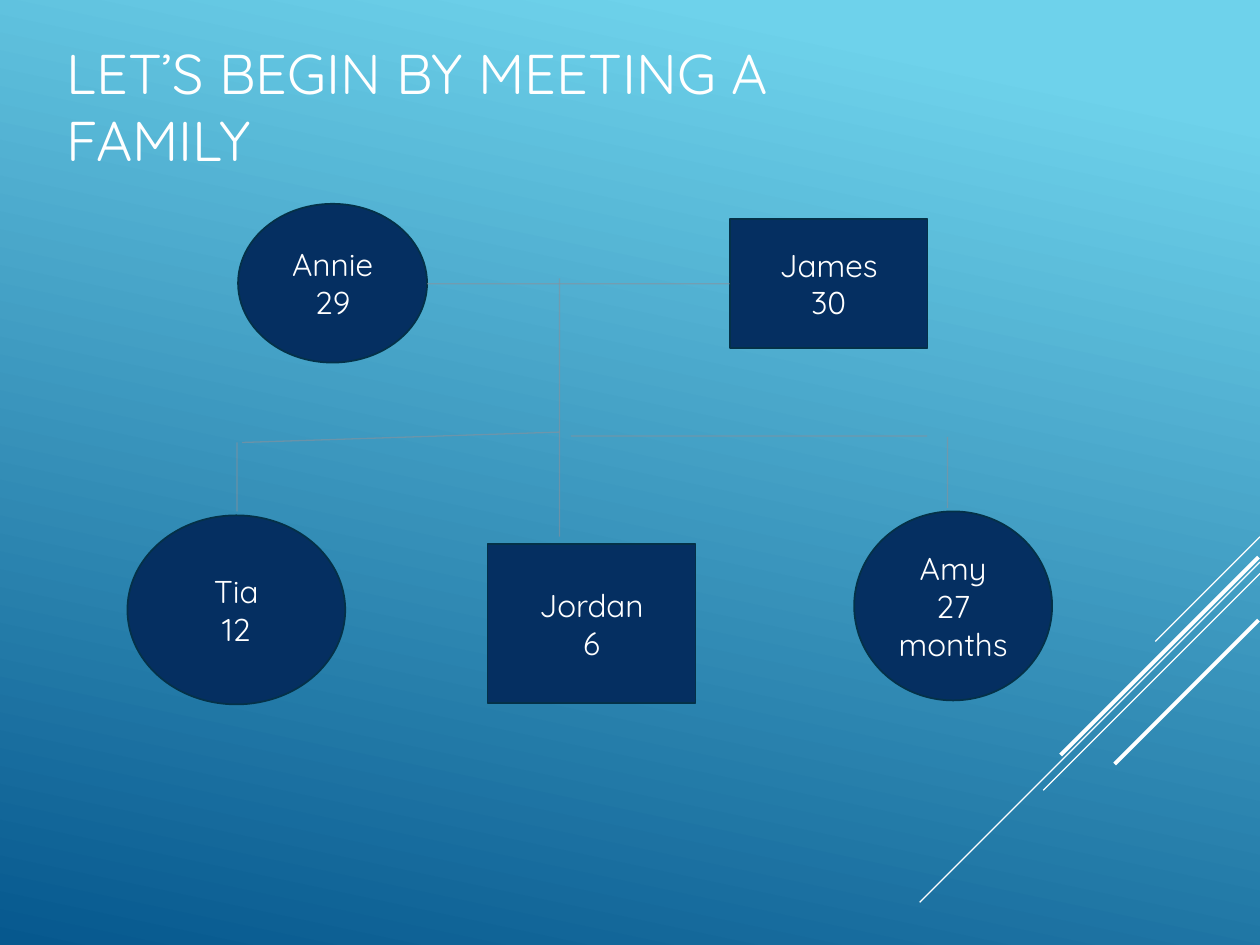
from dataclasses import dataclass

from lxml.etree import SubElement
from pptx import Presentation
from pptx.dml.color import RGBColor
from pptx.enum.shapes import MSO_CONNECTOR, MSO_SHAPE
from pptx.enum.text import MSO_ANCHOR, PP_ALIGN
from pptx.oxml.ns import qn
from pptx.util import Cm, Pt


@dataclass(frozen=True)
class Theme:
    font: str = "Quicksand"
    title_size: float = 32
    person_size: float = 18
    white: str = "FFFFFF"
    sky: str = "6ED2EB"
    sea: str = "06588E"
    person_fill: str = "052F61"
    person_line: str = "043148"
    link: str = "89919C"
    link_opacity: int = 60
    thin: float = 0.75
    outline: float = 1
    thick: float = 2.25


@dataclass(frozen=True)
class Box:
    left: float
    top: float
    width: float
    height: float

    def inside(self, left, top, width, height):
        return Box(self.left + left, self.top + top, width, height)

    def lengths(self):
        return [Cm(value) for value in (self.left, self.top, self.width, self.height)]


THEME = Theme()

# Name, age, shape, then left, top, width and height within the tree
PEOPLE = [
    ("Annie", "29", MSO_SHAPE.OVAL, (2.3, 0.11, 3.81, 3.2)),
    ("James", "30", MSO_SHAPE.RECTANGLE, (12.21, 0.42, 3.99, 2.59)),
    ("Tia", "12", MSO_SHAPE.OVAL, (0.07, 6.39, 4.39, 3.81)),
    ("Amy", "27 months", MSO_SHAPE.OVAL, (14.72, 6.31, 3.99, 3.81)),
    ("Jordan", "6", MSO_SHAPE.RECTANGLE, (7.33, 6.97, 4.19, 3.2)),
]

# Start and end points within the tree
LINKS = [
    (6.11, 1.72, 12.21, 1.72),
    (8.78, 1.61, 8.78, 4.43),
    (8.78, 4.71, 2.38, 4.92),
    (9.01, 4.79, 16.19, 4.79),
    (16.6, 4.81, 16.6, 6.24),
    (2.28, 6.31, 2.28, 4.92),
    (8.78, 4.43, 8.78, 6.82),
]

# Gap from the right edge, top, run and weight of each 45-degree stripe
STRIPES = [
    (0, 0, 2.11, THEME.thin),
    (0, 0.51, 6.86, THEME.thin),
    (0, 0.74, 4.37, THEME.thin),
    (0.03, 0.41, 3.99, THEME.thick),
    (0.03, 1.68, 2.9, THEME.thick),
]


def color(value):
    return RGBColor.from_string(value)


def write_text(frame, lines, size, alignment):
    formats = {"word_wrap": True, "vertical_anchor": MSO_ANCHOR.MIDDLE}
    for name, value in formats.items():
        setattr(frame, name, value)
    frame.text = "\n".join(lines)
    for paragraph in frame.paragraphs:
        paragraph.alignment = alignment
        for name, value in {"name": THEME.font, "size": Pt(size)}.items():
            setattr(paragraph.font, name, value)
        paragraph.font.color.rgb = color(THEME.white)


def add_line(slide, box, points, line_color, weight, opacity=100):
    """Draw a straight line between two points given relative to the box."""
    x1, y1, x2, y2 = points
    line = slide.shapes.add_connector(
        MSO_CONNECTOR.STRAIGHT,
        Cm(box.left + x1), Cm(box.top + y1), Cm(box.left + x2), Cm(box.top + y2),
    )
    line.line.color.rgb = color(line_color)
    line.line.width = Pt(weight)
    properties = line._element.spPr
    SubElement(properties, qn("a:effectLst"))
    if opacity < 100:
        fill = properties.find(".//" + qn("a:srgbClr"))
        SubElement(fill, qn("a:alpha"), val=str(opacity * 1000))


def paint_background(slide):
    fill = slide.background.fill
    fill.gradient()
    fill.gradient_angle = 258
    for stop, position, value in zip(fill.gradient_stops, (0.1, 1), (THEME.sky, THEME.sea)):
        stop.position = position
        stop.color.rgb = color(value)


def add_stripes(slide, box):
    for gap, top, run, weight in STRIPES:
        right = box.width - gap
        add_line(slide, box, (right, top, right - run, top + run), THEME.white, weight)


def add_title(slide, box, text):
    title = slide.shapes.add_textbox(*box.lengths())
    write_text(title.text_frame, [text], THEME.title_size, PP_ALIGN.LEFT)


def add_person(slide, box, kind, name, age):
    person = slide.shapes.add_shape(kind, *box.lengths())
    person.shadow.inherit = False
    person.fill.solid()
    person.fill.fore_color.rgb = color(THEME.person_fill)
    person.line.color.rgb = color(THEME.person_line)
    person.line.width = Pt(THEME.outline)
    write_text(person.text_frame, [name, age], THEME.person_size, PP_ALIGN.CENTER)


def add_family_tree(slide, box):
    for name, age, kind, place in PEOPLE:
        add_person(slide, box.inside(*place), kind, name, age)
    for points in LINKS:
        add_line(slide, box, points, THEME.link, THEME.thin, THEME.link_opacity)


def main():
    presentation = Presentation()
    presentation.slide_width = Cm(25.4)
    presentation.slide_height = Cm(19.05)
    slide = presentation.slides.add_slide(presentation.slide_layouts[6])
    paint_background(slide)
    add_stripes(slide, Box(18.54, 10.82, 6.86, 7.39))
    add_title(slide, Box(1.09, 0.28, 17.37, 3.71), "LET’S BEGIN BY MEETING A FAMILY")
    add_family_tree(slide, Box(2.5, 4, 18.71, 10.2))
    presentation.save("out.pptx")


if __name__ == "__main__":
    main()
